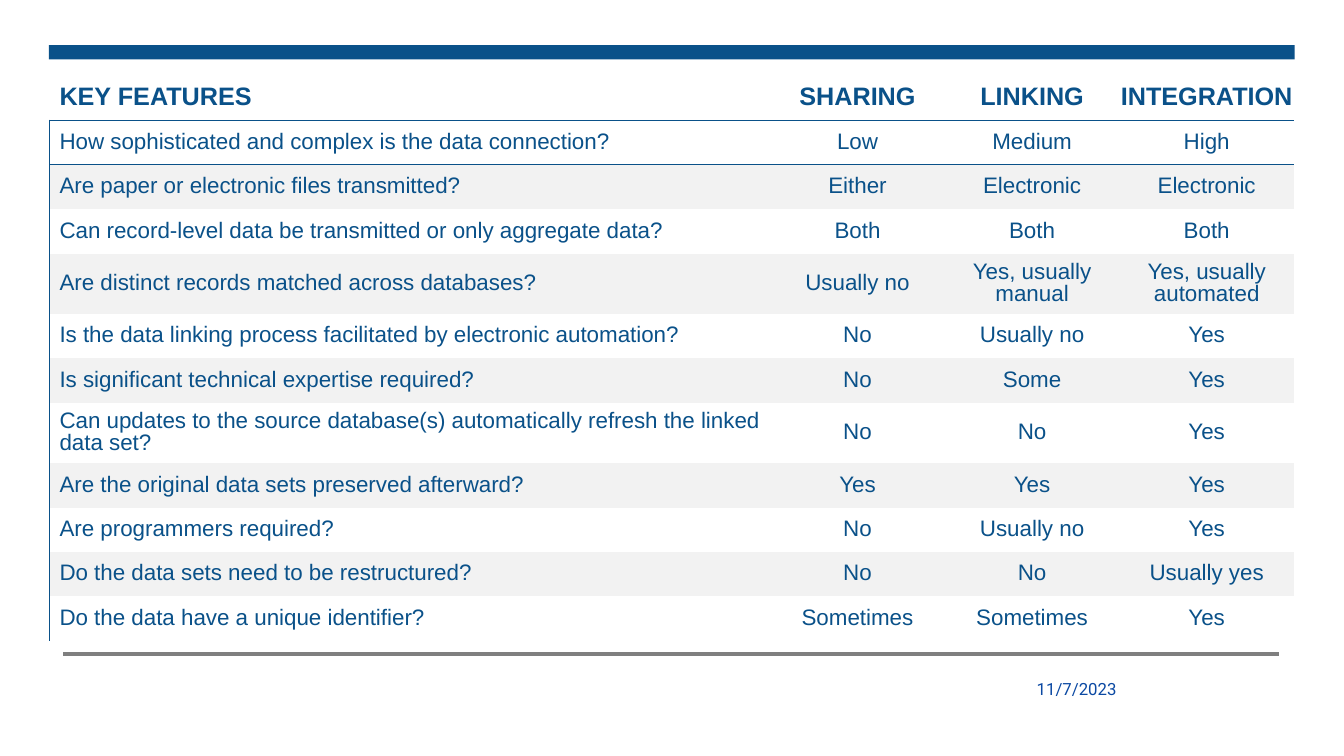
"""Build a slide comparing the key features of data sharing, linking and integration."""
from lxml import etree
from pptx import Presentation
from pptx import util as u
from pptx.dml.color import RGBColor
from pptx.enum import shapes, text
from pptx.oxml.ns import qn

COLORS = {"blue": "0A5189", "band": "F2F2F2", "rule": "7F7F7F", "date": "0B49A3"}
NO_STYLE = "{2D5ABB26-0587-4C30-8999-92F81FD0307C}"
ROWS = [
    ("KEY FEATURES", "SHARING", "LINKING", "INTEGRATION"),
    ("How sophisticated and complex is the data connection?", "Low", "Medium", "High"),
    ("Are paper or electronic files transmitted?", "Either", "Electronic", "Electronic"),
    ("Can record-level data be transmitted or only aggregate data?", "Both", "Both", "Both"),
    ("Are distinct records matched across databases?",
     "Usually no", "Yes, usually manual", "Yes, usually automated"),
    ("Is the data linking process facilitated by electronic automation?",
     "No", "Usually no", "Yes"),
    ("Is significant technical expertise required?", "No", "Some", "Yes"),
    ("Can updates to the source database(s) automatically refresh the linked data set?",
     "No", "No", "Yes"),
    ("Are the original data sets preserved afterward?", "Yes", "Yes", "Yes"),
    ("Are programmers required?", "No", "Usually no", "Yes"),
    ("Do the data sets need to be restructured?", "No", "No", "Usually yes"),
    ("Do the data have a unique identifier?", "Sometimes", "Sometimes", "Yes"),
]
HEADER_HEIGHT, ROW_HEIGHT, TALL_HEIGHT = 1.17, 1.12, 1.52
TALL_ROWS = (4, 7)


def rgb(name):
    return RGBColor.from_string(COLORS[name])


def add_border(cell, side):
    ln = etree.SubElement(cell._tc.get_or_add_tcPr(), qn(f"a:ln{side}"), w=str(u.Pt(1)))
    fill = etree.SubElement(ln, qn("a:solidFill"))
    etree.SubElement(fill, qn("a:srgbClr"), val=COLORS["blue"])


prs = Presentation()
prs.slide_width, prs.slide_height = u.Cm(33.87), u.Cm(19.05)
s = prs.slides.add_slide(prs.slide_layouts[6])

bar = s.shapes.add_shape(shapes.MSO_SHAPE.RECTANGLE,
                         u.Cm(1.23), u.Cm(1.14), u.Cm(31.4), u.Cm(0.36))
bar.shadow.inherit = False
bar.fill.solid()
bar.fill.fore_color.rgb = rgb("blue")
bar.line.fill.background()

rule = s.shapes.add_connector(shapes.MSO_CONNECTOR.STRAIGHT,
                              u.Cm(1.6), u.Cm(16.48), u.Cm(32.23), u.Cm(16.48))
rule.line.color.rgb = rgb("rule")
rule.line.width = u.Pt(2.25)
etree.SubElement(rule._element.spPr, qn("a:effectLst"))

table = s.shapes.add_table(len(ROWS), 4, u.Cm(1.25), u.Cm(1.86),
                           u.Cm(31.36), u.Cm(14.3)).table
table._tbl.tblPr.find(qn("a:tableStyleId")).text = NO_STYLE
table.horz_banding = False
for col, width in zip(table.columns, (18.16, 4.4, 4.4, 4.4)):
    col.width = u.Cm(width)

for i, row in enumerate(ROWS):
    header = i == 0
    height = HEADER_HEIGHT if header else TALL_HEIGHT if i in TALL_ROWS else ROW_HEIGHT
    table.rows[i].height = u.Cm(height)
    for j, value in enumerate(row):
        cell = table.cell(i, j)
        cell.margin_left = u.Cm(0.25 if j == 0 else 0)
        cell.margin_right = cell.margin_top = cell.margin_bottom = 0
        cell.vertical_anchor = text.MSO_ANCHOR.MIDDLE
        if j == 0 and not header:
            add_border(cell, "L")
        if i == 1:
            add_border(cell, "T")
        if header:
            add_border(cell, "B")
        if i and i % 2 == 0:
            cell.fill.solid()
            cell.fill.fore_color.rgb = rgb("band")
        else:
            cell.fill.background()
        cell.text = value
        p = cell.text_frame.paragraphs[0]
        p.alignment = text.PP_ALIGN.CENTER if j else text.PP_ALIGN.LEFT
        if not header:
            p.line_spacing = 0.9
        p.font.name = "Arial"
        p.font.size = u.Pt(18 if header else 16)
        p.font.bold = header
        p.font.color.rgb = rgb("blue")

date = s.shapes.add_textbox(u.Cm(21.13), u.Cm(16.81), u.Cm(7.26), u.Cm(1.09))
tf = date.text_frame
tf.word_wrap = True
tf.vertical_anchor = text.MSO_ANCHOR.MIDDLE
p = tf.paragraphs[0]
p.text = "11/7/2023"
p.alignment = text.PP_ALIGN.RIGHT
p.space_after = u.Pt(6)
p.font.name = "Roboto"
p.font.size = u.Pt(12)
p.font.color.rgb = rgb("date")

prs.save("out.pptx")
